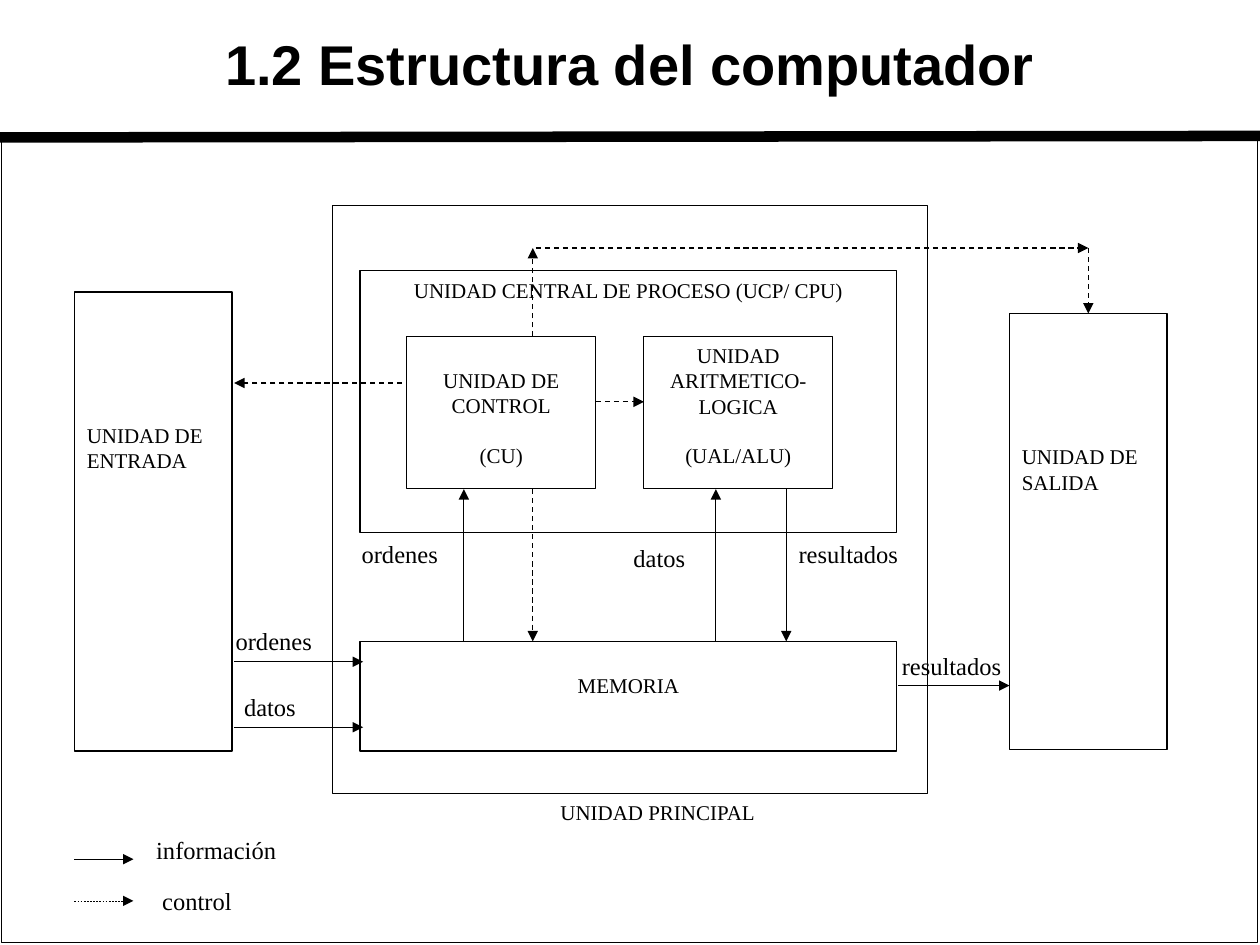
import dataclasses

import lxml.etree
import pptx
import pptx.dml.color
import pptx.enum.dml
import pptx.enum.shapes
import pptx.enum.text
import pptx.oxml.ns
import pptx.util

Cm = pptx.util.Cm
Pt = pptx.util.Pt
Align = pptx.enum.text.PP_ALIGN
Anchor = pptx.enum.text.MSO_ANCHOR


@dataclasses.dataclass(frozen=True)
class Theme:
    ink: pptx.dml.color.RGBColor = pptx.dml.color.RGBColor(0, 0, 0)
    paper: pptx.dml.color.RGBColor = pptx.dml.color.RGBColor(255, 255, 255)
    title_font: str = "Arial"
    body_font: str = "Times New Roman"
    title_size: int = 32
    label_size: int = 14
    unit_size: int = 12
    text_line: float = 0.5  # height of one line of unit text, in cm


class Diagram:
    def __init__(self, slide, theme):
        self.slide = slide
        self.theme = theme

    def fill_text(self, frame, paragraphs, size, align, font=None, bold=None):
        for index, text in enumerate(paragraphs):
            paragraph = frame.paragraphs[0] if index == 0 else frame.add_paragraph()
            paragraph.text = text
            paragraph.alignment = align
            paragraph.font.name = font or self.theme.body_font
            paragraph.font.size = Pt(size)
            paragraph.font.bold = bold
            paragraph.font.color.rgb = self.theme.ink
            if index:
                paragraph.space_before = Pt(14)

    def box(self, left, top, width, height, paragraphs=(), lines_above=0,
            align=Align.CENTER, filled=True, weight=0.75):
        shape = self.slide.shapes.add_shape(
            pptx.enum.shapes.MSO_SHAPE.RECTANGLE,
            Cm(left), Cm(top), Cm(width), Cm(height))
        shape.shadow.inherit = False
        if filled:
            shape.fill.solid()
            shape.fill.fore_color.rgb = self.theme.paper
        else:
            shape.fill.background()
        shape.line.color.rgb = self.theme.ink
        shape.line.width = Pt(weight)
        frame = shape.text_frame
        frame.word_wrap = True
        frame.vertical_anchor = Anchor.TOP
        frame.margin_top = Cm(0.13 + lines_above * self.theme.text_line)
        self.fill_text(frame, paragraphs, self.theme.unit_size, align)
        return shape

    def line(self, start_x, start_y, end_x, end_y, weight=0.75, dashed=False, arrow=True):
        connector = self.slide.shapes.add_connector(
            pptx.enum.shapes.MSO_CONNECTOR.STRAIGHT,
            Cm(start_x), Cm(start_y), Cm(end_x), Cm(end_y))
        connector.line.color.rgb = self.theme.ink
        connector.line.width = Pt(weight)
        if dashed:
            connector.line.dash_style = pptx.enum.dml.MSO_LINE.DASH
        qn = pptx.oxml.ns.qn
        properties = connector._element.spPr
        if arrow:
            outline = properties.find(qn("a:ln"))
            lxml.etree.SubElement(outline, qn("a:tailEnd"), type="triangle")
        lxml.etree.SubElement(properties, qn("a:effectLst"))
        return connector

    def text(self, left, top, width, height, text, size=None, align=Align.LEFT,
             wrap=False, anchor=Anchor.TOP, font=None, bold=None):
        shape = self.slide.shapes.add_textbox(Cm(left), Cm(top), Cm(width), Cm(height))
        frame = shape.text_frame
        frame.word_wrap = wrap
        frame.vertical_anchor = anchor
        self.fill_text(frame, [text], size or self.theme.label_size, align, font, bold)


def main():
    presentation = pptx.Presentation()
    presentation.slide_width = Cm(25.4)
    presentation.slide_height = Cm(19.05)
    slide = presentation.slides.add_slide(presentation.slide_layouts[6])
    theme = Theme()
    diagram = Diagram(slide, theme)

    # Page rule, frame and title
    diagram.line(0, 2.77, 25.45, 2.74, weight=6, arrow=False)
    diagram.box(0.03, 2.74, 25.32, 16.26, filled=False, weight=1)
    diagram.text(0.64, 0, 24.13, 2.54, "1.2 Estructura del computador",
                 theme.title_size, Align.CENTER, True, Anchor.MIDDLE,
                 theme.title_font, True)

    # Units of the computer
    diagram.box(8.2, 6.78, 3.81, 3.07, ["UNIDAD DE CONTROL", "(CU)"], 1)
    diagram.box(12.98, 6.78, 3.81, 3.07, ["UNIDAD ARITMETICO-LOGICA", "(UAL/ALU)"])
    diagram.box(7.26, 5.46, 10.82, 5.28, ["UNIDAD CENTRAL DE PROCESO (UCP/ CPU)"],
                filled=False)
    diagram.box(7.26, 12.93, 10.82, 2.21, ["MEMORIA"], 1)
    diagram.box(6.71, 4.14, 11.99, 11.86, filled=False)
    output_unit = diagram.box(20.35, 6.32, 3.18, 8.79, ["UNIDAD DE SALIDA"], 5, Align.LEFT)
    diagram.box(1.5, 5.89, 3.18, 9.25, ["UNIDAD DE ENTRADA"], 5, Align.LEFT)

    # Information flow
    memory_top, control_bottom = 12.93, 9.86
    for y in (13.34, 14.66):
        diagram.line(4.72, y, 7.32, y)
    diagram.line(18.11, 13.82, 20.35, 13.82)
    for x in (9.35, 14.43):
        diagram.line(x, memory_top, x, control_bottom)
    diagram.line(15.85, control_bottom, 15.85, memory_top)

    # Control flow
    for ends in (
        (8.1, 7.72, 4.72, 7.72),
        (12.01, 8.1, 12.98, 8.1),
        (10.74, control_bottom, 10.74, memory_top),
        (10.74, 6.78, 10.74, 5),
        (10.8, 5, 21.94, 5),
    ):
        diagram.line(*ends, dashed=True)
    diagram.line(21.94, 5, 21.94, 6.32, dashed=True).end_connect(output_unit, 0)

    # Flow labels
    for left, top, width, label in (
        (15.85, 10.74, 2.87, "resultados"),
        (12.52, 10.82, 1.91, "datos"),
        (7.04, 10.74, 2.54, "ordenes"),
        (17.93, 13, 2.54, "resultados"),
        (4.5, 12.5, 2.87, "ordenes"),
        (4.67, 13.82, 2.24, "datos"),
    ):
        diagram.text(left, top, width, 1.32, label, wrap=True)
    diagram.text(7.06, 16, 12.4, 1.32, "UNIDAD PRINCIPAL",
                 theme.unit_size, Align.CENTER, True)

    # Legend
    for y, left, top, width, label, dashed in (
        (17.32, 2.9, 16.71, 2.92, "información", False),
        (18.16, 3.02, 17.73, 1.91, "control", True),
    ):
        diagram.line(1.5, y, 2.69, y, weight=0.25, dashed=dashed)
        diagram.text(left, top, width, 0.84, label)

    presentation.save("out.pptx")


if __name__ == "__main__":
    main()
